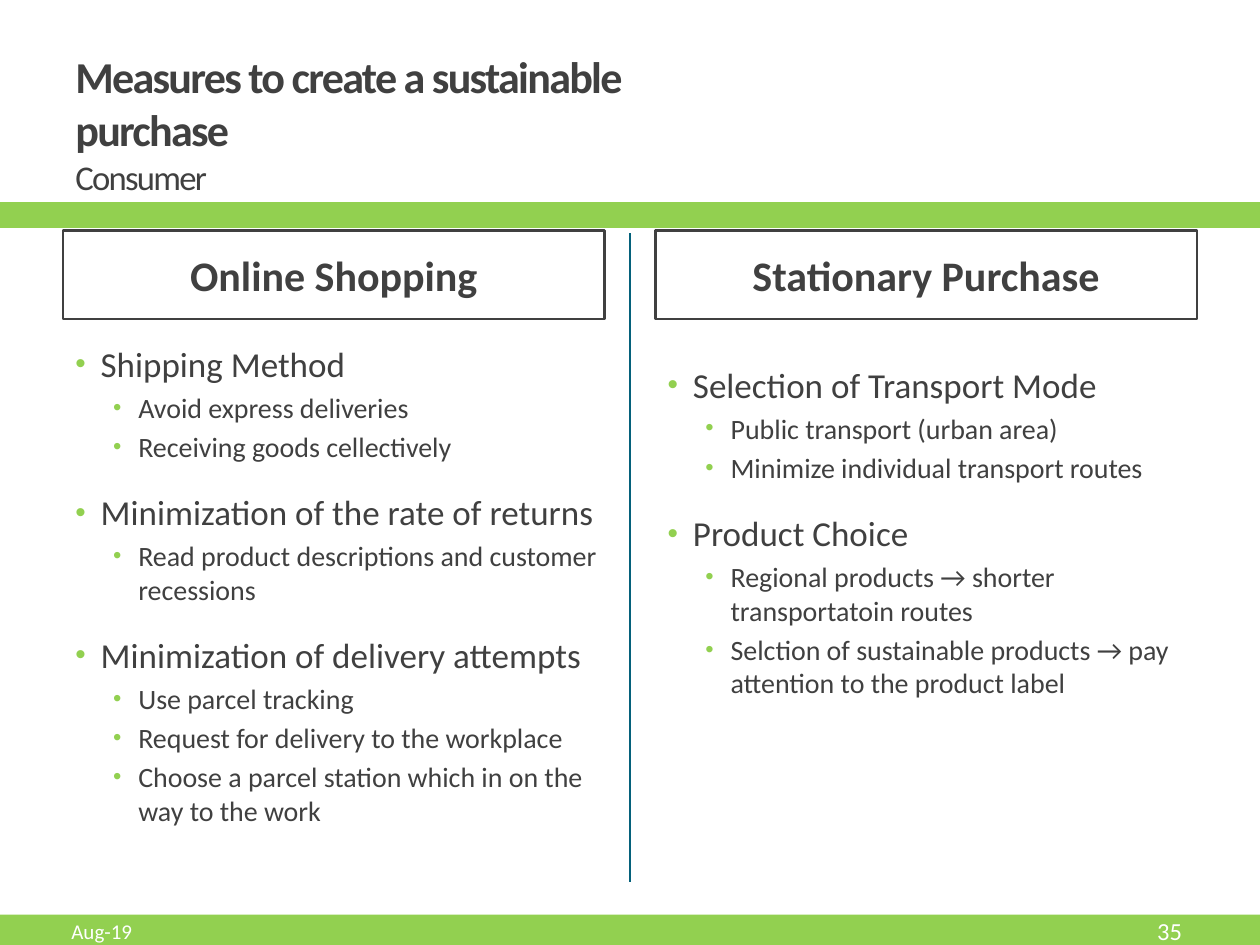
"""Build the slide on consumer measures for a sustainable purchase."""
from lxml.etree import SubElement
from pptx import Presentation
from pptx.dml.color import RGBColor
from pptx.enum.shapes import MSO_CONNECTOR, MSO_SHAPE
from pptx.enum.text import MSO_ANCHOR, PP_ALIGN
from pptx.oxml.ns import qn
from pptx.util import Cm, Pt

GREEN, GREY, WHITE, BLUE = "92D050", "404040", "FFFFFF", "04617B"

TITLE = "Measures to create a sustainable purchase"
SUBTITLE = "Consumer"
COLUMNS = [
    {
        "heading": "Online Shopping", "left": 1.27, "body_width": 11.23,
        "topics": [
            ("Shipping Method", 1.0, ["Avoid express deliveries", "Receiving goods cellectively"]),
            ("Minimization of the rate of returns", 1.5,
             ["Read product descriptions and customer recessions"]),
            ("Minimization of delivery attempts", 1.5,
             ["Use parcel tracking", "Request for delivery to the workplace",
              "Choose a parcel station which in on the way to the work"]),
        ],
    },
    {
        "heading": "Stationary Purchase", "left": 13.21, "body_width": 10.92,
        "topics": [
            ("Selection of Transport Mode", 1.5,
             ["Public transport (urban area)", "Minimize individual transport routes"]),
            ("Product Choice", 1.5,
             ["Regional products → shorter transportatoin routes",
              "Selction of sustainable products → pay attention to the product label"]),
        ],
    },
]
BANDS = [(-0.1, 18.44, 25.6, 1.27, None), (0, 4.11, 25.7, 0.46, 2.08)]
FOOTERS = [
    ("Aug-19", (1.19, 18.31, 8.05, 0.91), 12, PP_ALIGN.LEFT),
    ("35", (21.11, 18.31, 2.97, 0.91), 14, PP_ALIGN.RIGHT),
]
LEVELS = [{"size": 20, "margin": 0.51}, {"size": 16, "margin": 1.27}]
HANGING = 0.51


def color(hex_text):
    return RGBColor.from_string(hex_text)


def assign(target, values):
    for name, value in values.items():
        setattr(target, name, value)


def format_font(font, size, hex_text=GREY, bold=False):
    assign(font, {"name": "Calibri", "size": Pt(size), "bold": bold})
    font.color.rgb = color(hex_text)


def add_rectangle(slide, box, fill, line=None, width=None):
    shape = slide.shapes.add_shape(MSO_SHAPE.RECTANGLE, *map(Cm, box))
    shape.shadow.inherit = False
    shape.fill.solid()
    shape.fill.fore_color.rgb = color(fill)
    if width:
        shape.line.color.rgb = color(line)
        shape.line.width = Pt(width)
    else:
        shape.line.fill.background()
    return shape


def add_text_frame(slide, box, anchor):
    frame = slide.shapes.add_textbox(*map(Cm, box)).text_frame
    assign(frame, {"word_wrap": True, "vertical_anchor": anchor})
    return frame


def add_title(slide):
    frame = add_text_frame(slide, (1.27, 1.12, 13.23, 2.74), MSO_ANCHOR.MIDDLE)
    paragraph = frame.paragraphs[0]
    for text, size, bold in [(TITLE, 25.2, True), (SUBTITLE, 19.8, False)]:
        if paragraph.runs:
            paragraph.add_line_break()
        run = paragraph.add_run()
        run.text = text
        format_font(run.font, size, bold=bold)
        run.font._element.set("spc", "-100")


def add_heading(slide, text, left):
    shape = add_rectangle(slide, (left, 4.65, 10.92, 1.78), WHITE, GREY, 1.5)
    shape.text_frame.vertical_anchor = MSO_ANCHOR.MIDDLE
    paragraph = shape.text_frame.paragraphs[0]
    assign(paragraph, {"text": text, "alignment": PP_ALIGN.CENTER})
    format_font(paragraph.font, 24, bold=True)


def add_bullet(paragraph, margin):
    properties = paragraph._p.get_or_add_pPr()
    properties.set("marL", str(Cm(margin)))
    properties.set("indent", str(-Cm(HANGING)))
    bullet_color = SubElement(properties, qn("a:buClr"))
    SubElement(bullet_color, qn("a:srgbClr"), val=GREEN)
    SubElement(properties, qn("a:buSzPct"), val="85000")
    SubElement(properties, qn("a:buFont"), typeface="Arial")
    SubElement(properties, qn("a:buChar"), char="•")


def add_topics(slide, topics, left, width):
    frame = add_text_frame(slide, (left, 6.78, width, 10.97), MSO_ANCHOR.TOP)
    lines = [
        line
        for topic, spacing, measures in topics
        for line in [(topic, 0, spacing)] + [(measure, 1, 1.0) for measure in measures]
    ]
    for index, (text, level, spacing) in enumerate(lines):
        paragraph = frame.add_paragraph() if index else frame.paragraphs[0]
        size = LEVELS[level]["size"]
        add_bullet(paragraph, LEVELS[level]["margin"])
        assign(paragraph, {
            "text": text, "level": level, "line_spacing": spacing,
            "space_before": Pt(0.2 * size if index else 0),
        })
        format_font(paragraph.font, size)


def add_divider(slide):
    ends = map(Cm, (12.7, 4.7, 12.7, 17.78))
    connector = slide.shapes.add_connector(MSO_CONNECTOR.STRAIGHT, *ends)
    connector.line.color.rgb = color(BLUE)
    connector.line.width = Pt(1.5)
    SubElement(connector._element.spPr, qn("a:effectLst"))


def main():
    presentation = Presentation()
    assign(presentation, {"slide_width": Cm(25.4), "slide_height": Cm(19.05)})
    slide = presentation.slides.add_slide(presentation.slide_layouts[6])
    for *box, line_width in BANDS:
        add_rectangle(slide, box, GREEN, GREEN, line_width)
    add_divider(slide)
    add_title(slide)
    for column in COLUMNS:
        add_heading(slide, column["heading"], column["left"])
        add_topics(slide, column["topics"], column["left"], column["body_width"])
    for text, box, size, alignment in FOOTERS:
        paragraph = add_text_frame(slide, box, MSO_ANCHOR.MIDDLE).paragraphs[0]
        assign(paragraph, {"text": text, "alignment": alignment})
        format_font(paragraph.font, size, WHITE)
    presentation.save("out.pptx")


if __name__ == "__main__":
    main()
